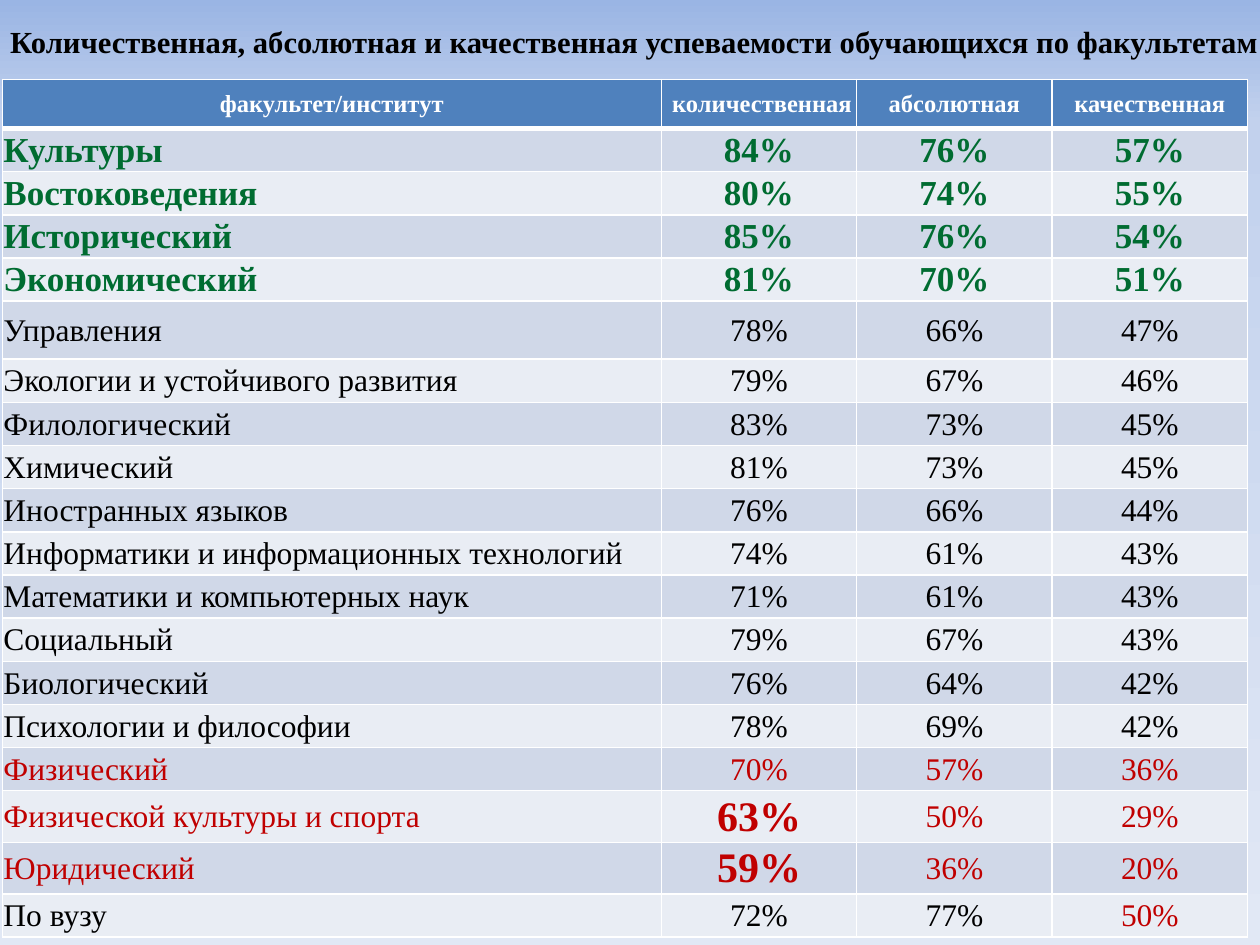
from copy import deepcopy

from lxml import etree
from pptx import Presentation
from pptx.dml.color import RGBColor
from pptx.enum.text import MSO_ANCHOR, MSO_AUTO_SIZE, PP_ALIGN
from pptx.oxml.ns import qn
from pptx.util import Cm, Pt

LEFT, CENTER = PP_ALIGN.LEFT, PP_ALIGN.CENTER
MIDDLE = MSO_ANCHOR.MIDDLE
GROW = MSO_AUTO_SIZE.SHAPE_TO_FIT_TEXT

BLACK = RGBColor(0x00, 0x00, 0x00)
WHITE = RGBColor(0xFF, 0xFF, 0xFF)
GREEN = RGBColor(0x00, 0x6C, 0x31)
RED = RGBColor(0xC0, 0x00, 0x00)
HEADER_BLUE = RGBColor(0x4F, 0x81, 0xBD)
BANDS = (RGBColor(0xD0, 0xD8, 0xE8), RGBColor(0xE9, 0xED, 0xF4))
BACKGROUND = (
    (0, RGBColor(0x9A, 0xB5, 0xE4)),
    (0.13, RGBColor(0xC2, 0xD1, 0xED)),
    (1, RGBColor(0xE1, 0xE8, 0xF5)),
)

TITLE = "Количественная, абсолютная и качественная успеваемости обучающихся по факультетам"
HEADER = ("факультет/институт", " количественная", "абсолютная", "качественная")
LEADERS = [
    ("Культуры", 84, 76, 57),
    ("Востоковедения", 80, 74, 55),
    ("Исторический", 85, 76, 54),
    ("Экономический", 81, 70, 51),
]
MIDDLE_GROUP = [
    ("Управления", 78, 66, 47),
    ("Экологии и устойчивого развития", 79, 67, 46),
    ("Филологический", 83, 73, 45),
    ("Химический", 81, 73, 45),
    ("Иностранных языков", 76, 66, 44),
    ("Информатики и информационных технологий", 74, 61, 43),
    ("Математики и компьютерных наук", 71, 61, 43),
    ("Социальный", 79, 67, 43),
    ("Биологический", 76, 64, 42),
    ("Психологии и философии", 78, 69, 42),
]
LAGGARDS = [
    ("Физический", 70, 57, 36),
    ("Физической культуры и спорта", 63, 50, 29),
    ("Юридический", 59, 36, 20),
]
TOTAL = [("По вузу", 72, 77, 50)]

HEADER_STYLE = {"size": 14, "color": WHITE, "bold": True}
PLAIN_STYLE = {"size": 18, "color": BLACK, "bold": False}
GROUPS = [
    (LEADERS, {"size": 20, "color": GREEN, "bold": True}),
    (MIDDLE_GROUP, PLAIN_STYLE),
    (LAGGARDS, {**PLAIN_STYLE, "color": RED}),
    (TOTAL, PLAIN_STYLE),
]
ALARM = {"size": 24, "bold": True}
EXCEPTIONS = {
    ("Физической культуры и спорта", 1): ALARM,
    ("Юридический", 1): ALARM,
    ("По вузу", 3): {"color": RED},
}

COLUMN_WIDTHS = (13.28, 3.94, 3.94, 3.94)
ROW_HEIGHT = 0.87
SPECIAL_HEIGHTS = {
    "факультет/институт": 0.99,
    "Управления": 1.17,
    "Физической культуры и спорта": 1.04,
    "Юридический": 1.04,
}


def write(frame, text, size=18, color=BLACK, bold=False, align=CENTER):
    para = frame.paragraphs[0]
    para.alignment = align
    span = para.add_run()
    span.text = text
    span.font.name = "Times New Roman"
    span.font.size = Pt(size)
    span.font.bold = bold
    span.font.color.rgb = color


def add_borders(cell, top, bottom):
    properties = cell._tc.get_or_add_tcPr()
    for side, width in (("L", 1), ("R", 1), ("T", top), ("B", bottom)):
        line = etree.SubElement(properties, qn("a:ln" + side), w=str(Pt(width)))
        fill = etree.SubElement(line, qn("a:solidFill"))
        etree.SubElement(fill, qn("a:srgbClr"), val=str(WHITE))


def paint_background(slide):
    fill = slide.background.fill
    fill.gradient()
    fill.gradient_angle = 270
    stop_list = slide.element.find(".//" + qn("a:gsLst"))
    stop_list.insert(1, deepcopy(stop_list[0]))
    for stop, (position, color) in zip(fill.gradient_stops, BACKGROUND):
        stop.position = position
        stop.color.rgb = color


def add_title(slide):
    title = slide.shapes.title
    title.left, title.top, title.width, title.height = Cm(-0.1), Cm(0.33), Cm(25.8), Cm(1.02)
    title.text_frame.word_wrap = True
    title.text_frame.auto_size = GROW
    write(title.text_frame, TITLE, size=17.5, bold=True)


def add_results(slide):
    rows = [(HEADER, HEADER_STYLE)]
    for group, style in GROUPS:
        for name, *values in group:
            rows.append(((name, *(f"{value}%" for value in values)), style))
    heights = [SPECIAL_HEIGHTS.get(texts[0], ROW_HEIGHT) for texts, style in rows]
    table = slide.shapes.add_table(
        len(rows), len(HEADER), Cm(0.05), Cm(1.6), Cm(sum(COLUMN_WIDTHS)), Cm(sum(heights))
    ).table
    for column, width in zip(table.columns, COLUMN_WIDTHS):
        column.width = Cm(width)
    for index, (texts, style) in enumerate(rows):
        table.rows[index].height = Cm(heights[index])
        for position, text in enumerate(texts):
            cell = table.cell(index, position)
            add_borders(cell, top=3 if index == 1 else 1, bottom=3 if index == 0 else 1)
            cell.fill.solid()
            cell.fill.fore_color.rgb = BANDS[(index - 1) % 2] if index else HEADER_BLUE
            cell.margin_left = cell.margin_right = cell.margin_top = Cm(0.02)
            cell.margin_bottom = 0
            cell.vertical_anchor = MIDDLE
            look = {**style, **EXCEPTIONS.get((texts[0], position), {})}
            write(cell.text_frame, text, align=LEFT if index and not position else CENTER, **look)


def main():
    deck = Presentation()
    deck.slide_width, deck.slide_height = Cm(25.4), Cm(19.05)
    page = deck.slides.add_slide(deck.slide_layouts[5])
    paint_background(page)
    add_results(page)
    add_title(page)
    deck.save("out.pptx")


if __name__ == "__main__":
    main()
